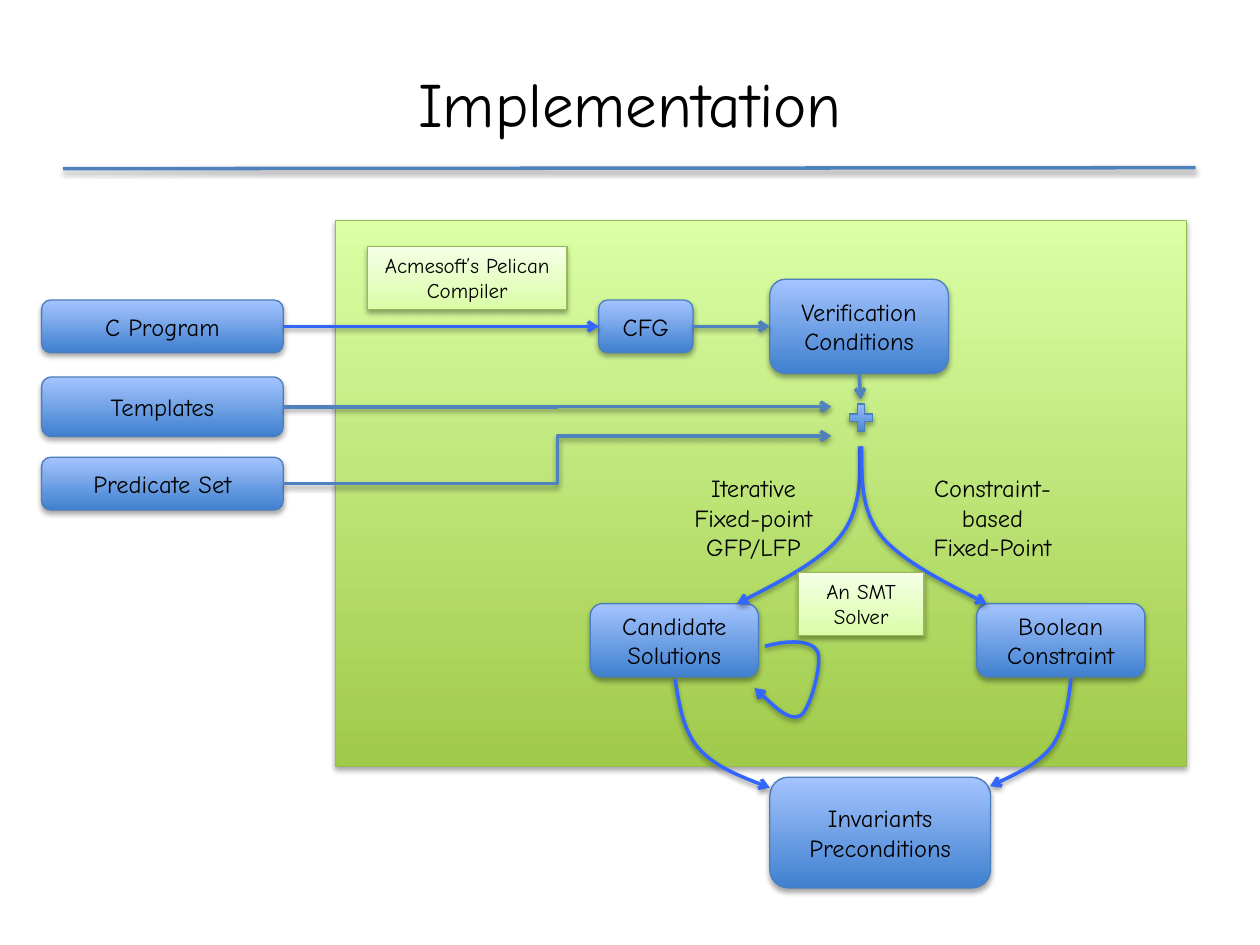
from lxml.etree import SubElement
from pptx import Presentation
from pptx.dml.color import RGBColor
from pptx.enum.shapes import MSO_CONNECTOR, MSO_SHAPE
from pptx.enum.text import MSO_ANCHOR, PP_ALIGN
from pptx.oxml.ns import qn
from pptx.util import Cm, Pt

FONT = "Comic Neue"
BLACK, BLUE, STEEL = "000000", "3366FF", "4F81BD"
# Gradients run from bottom to top: (bottom, top, outline)
BLUE_BOX = ("3F80CE", "A4C4FF", "4B7EBC")
PANEL = ("A0CA4A", "DAFFA5", "98B955")
TOOL = ("DAFDA7", "F5FFE7", "98B955")
TOP, LEFT, BOTTOM, RIGHT = range(4)


def rgb(value):
    return RGBColor.from_string(value)


def add_shadow(sp, alpha=38, dist=1.6):
    """Give a shape or connector a soft shadow that falls straight down."""
    props = sp._element.spPr
    effects = props.find(qn("a:effectLst"))
    if effects is None:
        effects = SubElement(props, qn("a:effectLst"))
    shadow = SubElement(effects, qn("a:outerShdw"), blurRad=str(Pt(3.1)),
                        dist=str(Pt(dist)), dir="5400000", rotWithShape="0")
    color = SubElement(shadow, qn("a:srgbClr"), val=BLACK)
    SubElement(color, qn("a:alpha"), val=str(alpha * 1000))


def style_line(sp, color, arrow=True):
    sp.line.color.rgb = rgb(color)
    sp.line.width = Pt(2)
    if arrow:
        SubElement(sp.line._get_or_add_ln(), qn("a:tailEnd"), type="arrow")


def set_text(sp, lines, size):
    tf = sp.text_frame
    tf.text = "\n".join(lines)
    for p in tf.paragraphs:
        p.alignment = PP_ALIGN.CENTER
        p.font.name = FONT
        p.font.size = Pt(size)
        p.font.color.rgb = rgb(BLACK)
    return tf


def add_box(s, box, colors, lines=(), kind=MSO_SHAPE.ROUNDED_RECTANGLE, size=14):
    sp = s.shapes.add_shape(kind, *map(Cm, box))
    bottom, top, outline = colors
    sp.fill.gradient()
    sp.fill.gradient_angle = 90
    for stop, position, color in zip(sp.fill.gradient_stops, (0, 1), (bottom, top)):
        stop.position = position
        stop.color.rgb = rgb(color)
    sp.line.color.rgb = rgb(outline)
    sp.line.width = Pt(0.75)
    sp.shadow.inherit = False
    add_shadow(sp, 35, 1.8)
    if lines:
        tf = set_text(sp, lines, size)
        tf.word_wrap = True
        tf.vertical_anchor = MSO_ANCHOR.MIDDLE
    return sp


def add_label(s, box, lines):
    sp = s.shapes.add_textbox(*map(Cm, box))
    set_text(sp, lines, 14).word_wrap = False


def add_line(s, start, end, color=STEEL, kind=MSO_CONNECTOR.STRAIGHT, arrow=True):
    """Connect two ends, each a point or a (shape, side) pair."""
    points = [(0, 0) if hasattr(e[0], "shape_id") else e for e in (start, end)]
    c = s.shapes.add_connector(kind, *(Cm(v) for pt in points for v in pt))
    if hasattr(start[0], "shape_id"):
        c.begin_connect(*start)
    if hasattr(end[0], "shape_id"):
        c.end_connect(*end)
    style_line(c, color, arrow)
    add_shadow(c)


def add_curve(s, *points):
    """Draw an arrow along cubic curves: a start, then three points per curve."""
    start, *rest = [(Cm(x), Cm(y)) for x, y in points]
    builder = s.shapes.build_freeform(*start)
    builder.add_line_segments(rest, close=False)
    sp = builder.convert_to_shape()
    # Join each three straight segments into one cubic curve
    segments = list(sp._element.iter(qn("a:lnTo")))
    outline = segments[0].getparent()
    for i in range(0, len(segments), 3):
        curve = SubElement(outline, qn("a:cubicBezTo"))
        for segment in segments[i:i + 3]:
            curve.append(segment[0])
            outline.remove(segment)
    sp.fill.background()
    style_line(sp, BLUE)
    sp.shadow.inherit = False
    add_shadow(sp)


def add_title(s, text):
    sp = s.shapes.title
    sp.left, sp.top, sp.width, sp.height = map(Cm, (1.27, 0.76, 22.86, 2.62))
    set_text(sp, [text], 36).vertical_anchor = MSO_ANCHOR.MIDDLE
    add_line(s, (1.27, 3.4), (24.1, 3.38), arrow=False)


def main():
    prs = Presentation()
    prs.slide_width, prs.slide_height = Cm(25.4), Cm(19.05)
    s = prs.slides.add_slide(prs.slide_layouts[5])
    add_title(s, "Implementation")

    # Tool panel, inputs and processing stages
    add_box(s, (6.77, 4.45, 17.15, 11), PANEL, kind=MSO_SHAPE.RECTANGLE)
    program, templates, predicates = [
        add_box(s, (0.84, top, 4.87, height), BLUE_BOX, [name])
        for name, top, height in (("C Program", 6.05, 1.06),
                                  ("Templates", 7.6, 1.2),
                                  ("Predicate Set", 9.22, 1.06))]
    cfg = add_box(s, (12.07, 6.05, 1.9, 1.06), BLUE_BOX, ["CFG"])
    conditions = add_box(s, (15.52, 5.63, 3.6, 1.9), BLUE_BOX,
                         ["Verification Conditions"])
    add_box(s, (15.52, 15.67, 4.45, 2.23), BLUE_BOX, ["Invariants", "Preconditions"])
    for name, left in (("Candidate Solutions", 11.9), ("Boolean Constraint", 19.69)):
        add_box(s, (left, 12.17, 3.39, 1.48), BLUE_BOX, [name])
    add_box(s, (17.04, 8.05, 0.64, 0.74), BLUE_BOX, kind=MSO_SHAPE.MATH_PLUS)

    # Names of the two solving methods
    add_label(s, (13.59, 9.42, 3.2, 2.06), ["Iterative", "Fixed-point", "GFP/LFP"])
    add_label(s, (18.42, 9.42, 3.18, 2.06), ["Constraint-", "based", "Fixed-Point"])

    # Straight and bent arrows
    add_line(s, (program, RIGHT), (cfg, LEFT), BLUE)
    add_line(s, (cfg, RIGHT), (conditions, LEFT))
    add_line(s, (conditions, BOTTOM), (17.35, 8.05))
    add_line(s, (templates, RIGHT), (16.76, 8.2), kind=MSO_CONNECTOR.ELBOW)
    add_line(s, (predicates, RIGHT), (16.76, 8.79), kind=MSO_CONNECTOR.ELBOW)

    # Curves from the plus to both methods
    add_curve(s, (17.33, 9), (17.35, 9.65), (17.35, 10.29), (16.94, 10.81),
              (16.54, 11.33), (14.86, 12.17), (14.86, 12.17))
    add_curve(s, (17.37, 9), (17.37, 9.65), (17.35, 10.29), (17.77, 10.81),
              (18.19, 11.33), (19.89, 12.17), (19.89, 12.17))
    # Loop on the candidate solutions
    add_curve(s, (15.42, 13.03), (15.88, 12.9), (16.36, 12.9), (16.48, 13.13),
              (16.59, 13.36), (16.33, 14.33), (16.13, 14.43),
              (15.9, 14.55), (15.21, 13.87), (15.21, 13.87))
    # Curves to the results
    add_curve(s, (13.61, 13.69), (13.69, 14.2), (13.77, 14.71), (14.07, 15.07),
              (14.4, 15.44), (14.96, 15.67), (15.52, 15.88))
    add_curve(s, (21.59, 13.67), (21.54, 14.17), (21.46, 14.68), (21.21, 15.04),
              (20.93, 15.39), (20.45, 15.62), (19.96, 15.85))

    # Tools in use
    for name, box in (("Acmesoft’s Pelican Compiler", (7.41, 4.97, 4.02, 1.27)),
                      ("An SMT Solver", (16.09, 11.54, 2.54, 1.27))):
        add_box(s, box, TOOL, [name], MSO_SHAPE.RECTANGLE, 12)

    prs.save("out.pptx")


if __name__ == "__main__":
    main()
